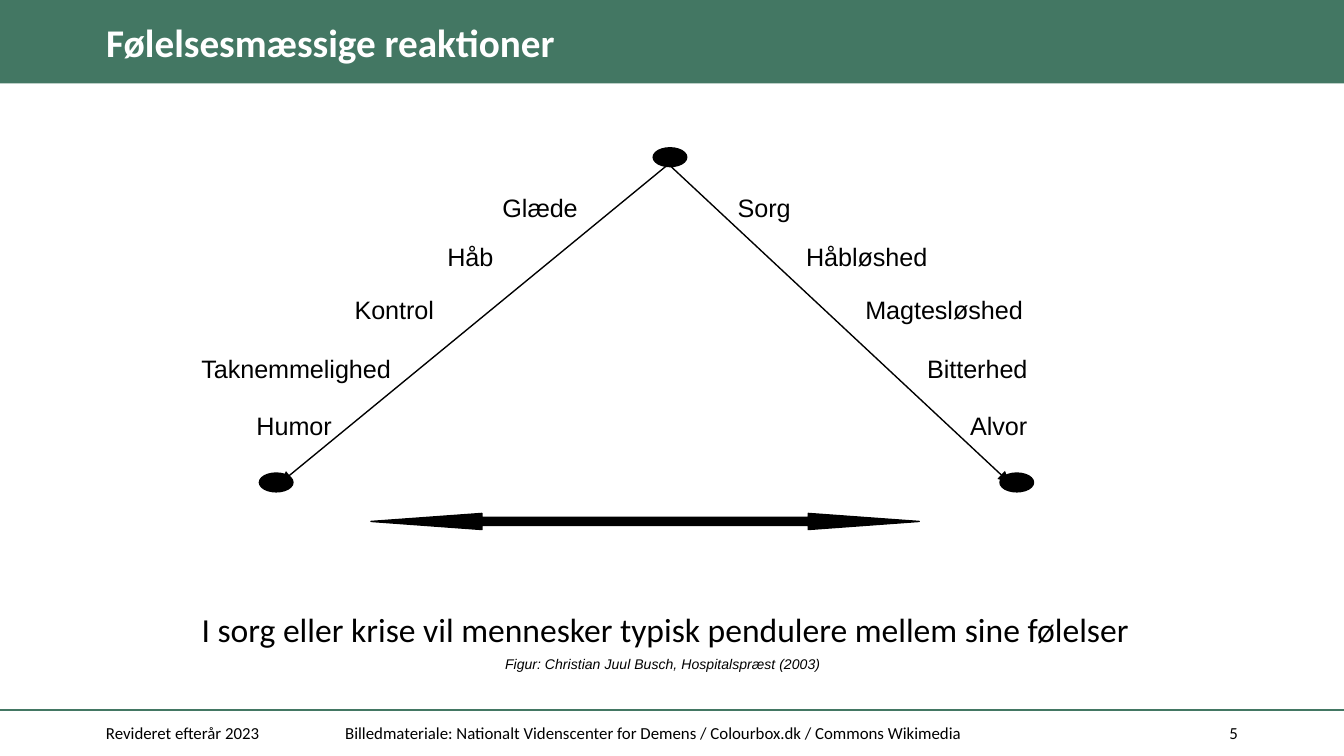
from lxml import etree
from pptx import Presentation
from pptx.dml.color import RGBColor
from pptx.enum.shapes import MSO_CONNECTOR, MSO_SHAPE
from pptx.enum.text import MSO_ANCHOR, MSO_AUTO_SIZE, PP_ALIGN
from pptx.oxml.ns import qn
from pptx.util import Inches, Pt

LEFT, RIGHT = PP_ALIGN.LEFT, PP_ALIGN.RIGHT
TOP, MIDDLE = MSO_ANCHOR.TOP, MSO_ANCHOR.MIDDLE
GREEN, BLACK, WHITE = "437763", "000000", "FFFFFF"
INSET = 0.1

TITLE = "Følelsesmæssige reaktioner"
MESSAGE = "I sorg eller krise vil mennesker typisk pendulere mellem sine følelser"
CREDIT = "Figur: Christian Juul Busch, Hospitalspræst (2003)"
# Opposite feelings: left word, its x, right word, its x, top of the row
FEELINGS = [
    ("Glæde", 3.74, "Sorg", 5.49, 1.38),
    ("Håb", 3.33, "Håbløshed", 6.0, 1.74),
    ("Kontrol", 2.64, "Magtesløshed", 6.44, 2.14),
    ("Taknemmelighed", 1.5, "Bitterhed", 6.9, 2.58),
    ("Humor", 1.91, "Alvor", 7.22, 3.0),
]
FOOTER = [
    ("Revideret efterår 2023", 0.69, 1.68, LEFT),
    ("Billedmateriale: Nationalt Videnscenter for Demens / Colourbox.dk / Commons Wikimedia",
     2.47, 6.3, LEFT),
    ("5", 8.85, 0.46, RIGHT),
]
PENDULUM_ARMS = [((5, 1.2), (2.09, 3.59)), ((4.94, 1.19), (7.51, 3.59))]
DOTS = [(1.93, 3.52), (7.44, 3.52), (4.86, 1.1)]


def color(hex_value):
    return RGBColor.from_string(hex_value)


def write(shape, text, size, font="Calibri", ink=BLACK, anchor=MIDDLE,
          align=LEFT, tab=None, **font_values):
    """Fill a text shape with one formatted paragraph; tab is in inches."""
    frame = shape.text_frame
    frame.word_wrap = True
    frame.auto_size = MSO_AUTO_SIZE.NONE
    frame.vertical_anchor = anchor
    paragraph = frame.paragraphs[0]
    paragraph.alignment = align
    paragraph.space_before = Pt(0)
    properties = paragraph._p.get_or_add_pPr()
    if tab:
        tabs = etree.SubElement(properties, qn("a:tabLst"))
        etree.SubElement(tabs, qn("a:tab"), pos=str(Inches(tab)), algn="l")
    elif shape.is_placeholder:
        properties.set("marL", "0")
        properties.set("indent", "0")
        etree.SubElement(properties, qn("a:buNone"))
    run = paragraph.add_run()
    run.text = text
    for name, value in {"size": Pt(size), "name": font, **font_values}.items():
        setattr(run.font, name, value)
    run.font.color.rgb = color(ink)


def place(shape, *box):
    for name, value in zip(("left", "top", "width", "height"), box):
        setattr(shape, name, Inches(value))


def add_text(box, text, size, **style):
    write(slide.shapes.add_textbox(*map(Inches, box)), text, size, **style)


def add_solid(kind, box, fill, outlined=True):
    shape = slide.shapes.add_shape(kind, *map(Inches, box))
    shape.shadow.inherit = False
    shape.fill.solid()
    shape.fill.fore_color.rgb = color(fill)
    if outlined:
        shape.line.color.rgb = color(fill)
        shape.line.width = Pt(0.75)
    else:
        shape.line.fill.background()
    return shape


def add_line(start, end, ink, width, arrow=False):
    line = slide.shapes.add_connector(MSO_CONNECTOR.STRAIGHT, *map(Inches, start + end))
    line.line.color.rgb = color(ink)
    line.line.width = Pt(width)
    if arrow:
        etree.SubElement(line.line._get_or_add_ln(), qn("a:tailEnd"), type="triangle")
    etree.SubElement(line._element.spPr, qn("a:effectLst"))


deck = Presentation()
deck.slide_width = Inches(10)
deck.slide_height = deck.slide_width * 9 // 16
slide = deck.slides.add_slide(deck.slide_layouts[1])
title, message = slide.placeholders

# Header band goes behind the title placeholder
band = add_solid(MSO_SHAPE.RECTANGLE, (0, 0, 10, 0.62), GREEN, outlined=False)
slide.shapes._spTree.insert(2, band._element)
place(title, 0.69, 0.11, 7.44, 0.44)
write(title, TITLE, 21, ink=WHITE, bold=True)
title.text_frame.paragraphs[0].line_spacing = 0.9
for side, inset in {"left": INSET, "top": 0, "right": 0, "bottom": 0}.items():
    setattr(title.text_frame, f"margin_{side}", Inches(inset))

add_line((0, 5.28), (10, 5.28), GREEN, 1)
for text, left, width, align in FOOTER:
    add_text((left, 5.3, width, 0.3), text, 9, align=align)

for start, end in PENDULUM_ARMS:
    add_line(start, end, BLACK, 0.75, arrow=True)
swing = add_solid(MSO_SHAPE.LEFT_RIGHT_ARROW, (2.76, 3.82, 4.08, 0.12), BLACK)
swing.adjustments[0], swing.adjustments[1] = 0.5, 6.88
for dot in DOTS:
    add_solid(MSO_SHAPE.OVAL, dot + (0.25, 0.14), BLACK)

for left_word, left_x, right_word, right_x, top in FEELINGS:
    add_text((left_x - INSET, top, right_x - left_x + 1.5, 0.33),
             f"{left_word}\t{right_word}", 13.5, font="Arial", tab=right_x - left_x)

add_text((3.66, 4.83, 3.6, 0.23), CREDIT, 7.5, font="Arial", anchor=TOP, italic=True)
place(message, 1.4, 4.48, 7.2, 0.74)
write(message, MESSAGE, 18, anchor=TOP)

deck.save("out.pptx")
